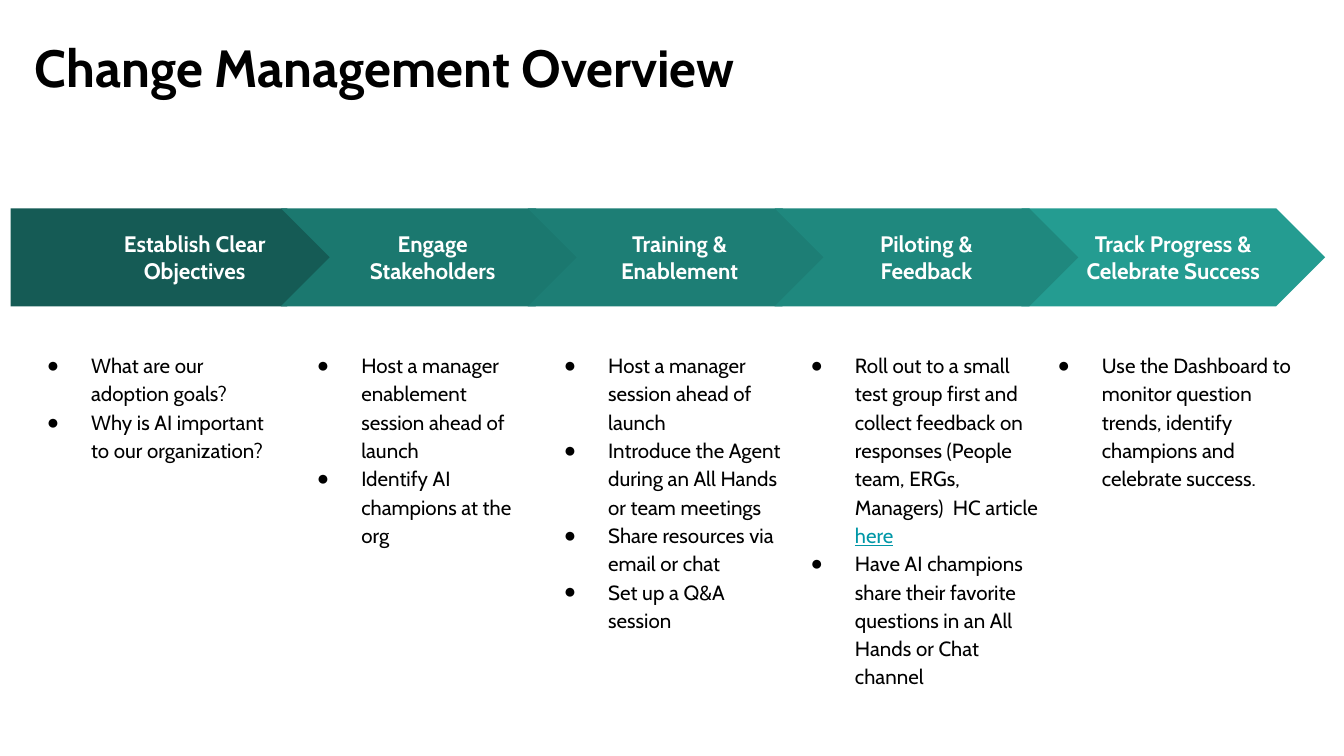
from lxml import etree
from pptx import Presentation
from pptx.dml.color import RGBColor
from pptx.enum.shapes import MSO_SHAPE
from pptx.enum.text import MSO_ANCHOR, PP_ALIGN
from pptx.oxml.ns import qn
from pptx.util import Inches, Pt

PENTAGON, CHEVRON = MSO_SHAPE.PENTAGON, MSO_SHAPE.CHEVRON
TOP, MIDDLE = MSO_ANCHOR.TOP, MSO_ANCHOR.MIDDLE
CENTER = PP_ALIGN.CENTER

COLORS = {
    "text": "000000",
    "label": "FFFFFF",
    "link": "0097A7",
    "objectives": "155B55",
    "engage": "1B786F",
    "training": "1D7E75",
    "piloting": "1F887E",
    "track": "249C91",
}
FONT, BULLET_FONT = "Cabin", "Arial"
TITLE = {"size": Pt(28), "bold": True}
LABEL = {"size": Pt(12), "bold": True}
BODY = {"size": Pt(11), "bold": False}

FIRST_LEFT, SECOND_LEFT, LAST_LEFT = 0.08, 2.09, 7.6
PITCH = (LAST_LEFT - SECOND_LEFT) / 3
ARROW_TOP, ARROW_HEIGHT = 1.55, 0.73
FIRST_WIDTH, CHEVRON_WIDTH = 2.42, 2.26
LIST_TOP, LIST_HEIGHT = 2.5, 2.57
INDENT, HANGING = 0.5, 0.33

STEPS = [
    (0, "objectives", "Establish Clear Objectives", 2.1, [
        ["What are our adoption goals?"],
        ["Why is AI important to our organization?"],
    ]),
    (1, "engage", "Engage Stakeholders", 1.97, [
        ["Host a manager enablement session ahead of launch"],
        ["Identify AI champions at the org"],
    ]),
    (2, "training", "Training & Enablement", 2.02, [
        ["Host a manager session ahead of launch"],
        ["Introduce the Agent during an All Hands or team meetings"],
        ["Share resources via email or chat"],
        ["Set up a Q&A session"],
    ]),
    (4, "track", "Track Progress & Celebrate Success", 2.12, [
        ["Use the Dashboard to monitor question trends, identify "
         "champions and celebrate success."],
    ]),
    (3, "piloting", "Piloting & Feedback", 2.07, [
        ["Roll out to a small test group first and collect feedback on "
         "responses (People team, ERGs, Managers)  HC article ", "here"],
        ["Have AI champions share their favorite questions in an All "
         "Hands or Chat channel"],
    ]),
]


def rgb(name):
    return RGBColor.from_string(COLORS[name])


def set_format(target, values):
    for name, value in values.items():
        setattr(target, name, value)


def set_frame(frame, anchor):
    margins = ("margin_left", "margin_top", "margin_right", "margin_bottom")
    set_format(frame, dict.fromkeys(margins, Inches(0.1)))
    set_format(frame, {"word_wrap": True, "vertical_anchor": anchor})


def add_span(para, text, style, color):
    span = para.add_run()
    span.text = text
    set_format(span.font, {"name": FONT, **style})
    span.font.color.rgb = rgb(color)


def add_box(page, left, top, width, height):
    box = page.shapes.add_textbox(*map(Inches, (left, top, width, height)))
    set_frame(box.text_frame, TOP)
    return box.text_frame


def set_indent(para, left, first=0):
    properties = para._p.get_or_add_pPr()
    properties.set("marL", str(Inches(left)))
    properties.set("indent", str(Inches(first)))
    return properties


def add_bullet(para):
    properties = set_indent(para, INDENT, -HANGING)
    color = etree.SubElement(properties, qn("a:buClr"))
    etree.SubElement(color, qn("a:srgbClr"), val=COLORS["text"])
    etree.SubElement(properties, qn("a:buFont"), typeface=BULLET_FONT)
    etree.SubElement(properties, qn("a:buChar"), char="●")
    para.line_spacing = 1.15
    set_format(para.font, {"name": FONT, **BODY})


def add_title(page, text):
    frame = add_box(page, 0.16, 0.16, 7.71, 1.15)
    add_span(frame.paragraphs[0], text, TITLE, "text")


def add_arrow(page, left, index, color, label):
    kind, width = (CHEVRON, CHEVRON_WIDTH) if index else (PENTAGON, FIRST_WIDTH)
    arrow = page.shapes.add_shape(
        kind, *map(Inches, (left, ARROW_TOP, width, ARROW_HEIGHT)))
    arrow.adjustments[0] = 0.5
    arrow.shadow.inherit = False
    arrow.fill.solid()
    arrow.fill.fore_color.rgb = rgb(color)
    arrow.line.fill.background()
    set_frame(arrow.text_frame, MIDDLE)
    para = arrow.text_frame.paragraphs[0]
    para.alignment = CENTER
    if index == 0:
        set_indent(para, INDENT)
    add_span(para, label, LABEL, "label")


def add_list(page, left, width, items):
    frame = add_box(page, left, LIST_TOP, width, LIST_HEIGHT)
    for number, (text, *links) in enumerate(items):
        para = frame.add_paragraph() if number else frame.paragraphs[0]
        add_bullet(para)
        add_span(para, text, BODY, "text")
        for link in links:
            add_span(para, link, {**BODY, "underline": True}, "link")


def main():
    deck = Presentation()
    deck.slide_width = Inches(10)
    deck.slide_height = deck.slide_width * 9 // 16
    page = deck.slides.add_slide(deck.slide_layouts[6])
    add_title(page, "Change Management Overview")
    for index, color, label, width, items in STEPS:
        left = SECOND_LEFT + (index - 1) * PITCH if index else FIRST_LEFT
        add_arrow(page, left, index, color, label)
        add_list(page, left, width, items)
    deck.save("out.pptx")


if __name__ == "__main__":
    main()
